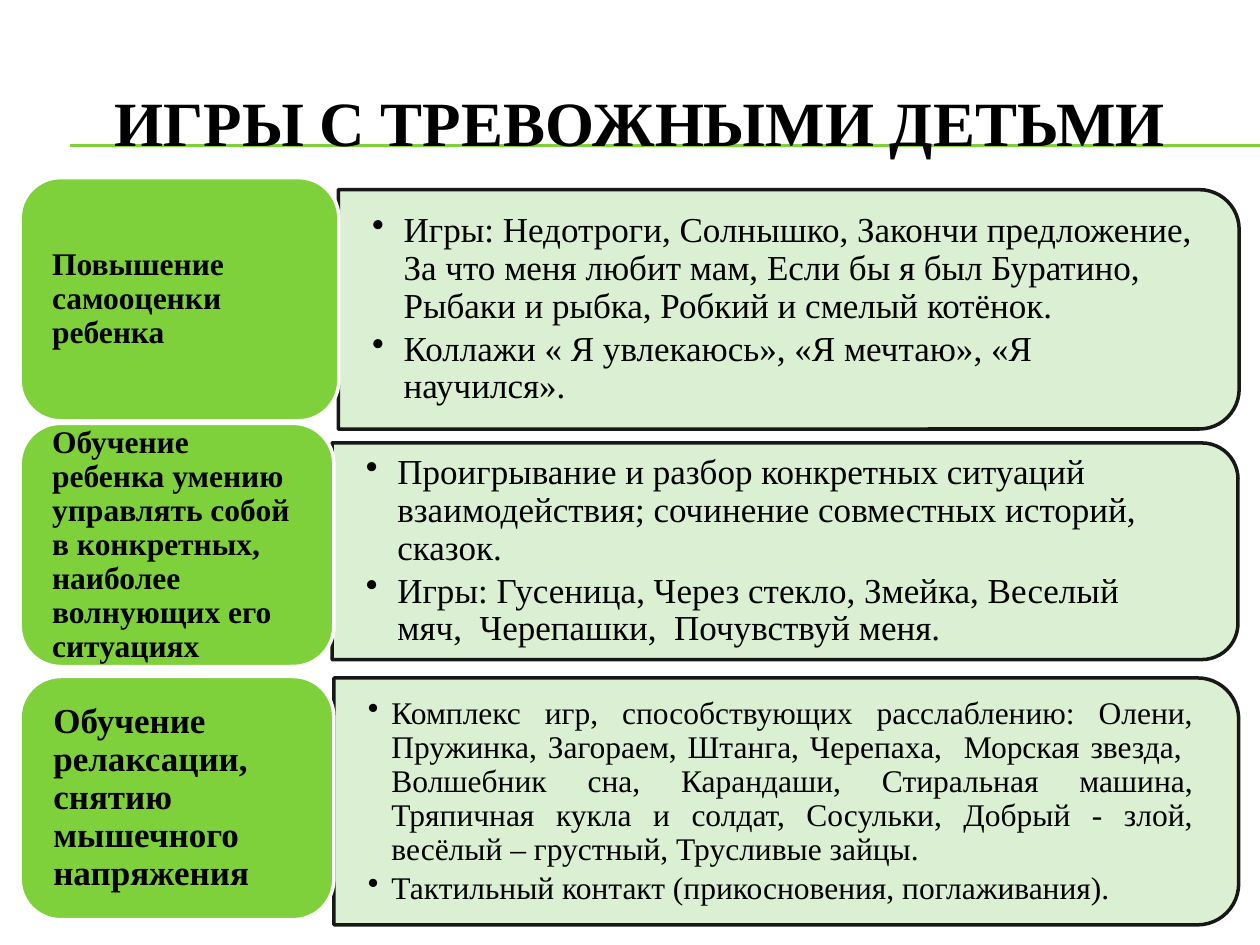
from lxml.etree import SubElement
from pptx import Presentation
from pptx.dml.color import RGBColor
from pptx.enum.shapes import MSO_CONNECTOR, MSO_SHAPE
from pptx.enum.text import MSO_ANCHOR, PP_ALIGN
from pptx.oxml.ns import qn
from pptx.util import Pt


def color(text):
    return RGBColor.from_string(text)


def write(shape, texts, size, bold, align, pad, dent=0, space=0.9):
    frame = shape.text_frame
    form = {
        "word_wrap": True, "vertical_anchor": MSO_ANCHOR.MIDDLE,
        "margin_left": Pt(pad[0]), "margin_right": Pt(pad[0]),
        "margin_top": Pt(pad[1]), "margin_bottom": Pt(pad[1]),
    }
    for key, value in form.items():
        setattr(frame, key, value)
    for num, text in enumerate(texts):
        para = frame.paragraphs[0] if num == 0 else frame.add_paragraph()
        para.text = text
        para.alignment = align
        para.line_spacing = space
        if dent:
            para.space_after = Pt(size * 0.15)
            props = para._p.get_or_add_pPr()
            props.set("marL", str(Pt(dent)))
            props.set("indent", str(-Pt(dent)))
            SubElement(props, qn("a:buChar"), char="•")
        font = para.runs[0].font
        for key, value in {"name": "Times New Roman", "size": Pt(size), "bold": bold}.items():
            setattr(font, key, value)
        font.color.rgb = color("000000")


deck = Presentation()
deck.slide_width, deck.slide_height = Pt(720), Pt(540)
slide = deck.slides.add_slide(deck.slide_layouts[6])
shapes = slide.shapes

for y in (82.8, 83.5):
    rule = shapes.add_connector(MSO_CONNECTOR.STRAIGHT, Pt(40.3), Pt(y), Pt(720), Pt(y))
    rule.line.color.rgb = color("7FD13B")
    rule.line.width = Pt(0.75)
    SubElement(rule._element.spPr, qn("a:effectLst"))

title = shapes.add_textbox(Pt(23.8), Pt(36), Pt(684), Pt(66.2))
write(title, ["ИГРЫ С ТРЕВОЖНЫМИ ДЕТЬМИ"], 36, True, PP_ALIGN.CENTER, (7.2, 3.6), space=1)

rows = [
    {
        "panel": (193.3, 108.4, 514.8, 136.8), "card": (101.5, 182.2),
        "head": "Повышение самооценки ребенка", "sizes": (18, 20),
        "dent": 18, "align": PP_ALIGN.LEFT, "pad": 11.5,
        "items": [
            "Игры: Недотроги, Солнышко, Закончи предложение, За что меня любит мам, "
            "Если бы я был Буратино, Рыбаки и рыбка, Робкий и смелый котёнок.",
            "Коллажи « Я увлекаюсь», «Я мечтаю», «Я научился».",
        ],
    },
    {
        "panel": (189.7, 253.1, 517.7, 123.8), "card": (241.9, 179.3),
        "head": "Обучение ребенка умению управлять собой в конкретных, "
                "наиболее волнующих его ситуациях", "sizes": (18, 20),
        "dent": 18, "align": PP_ALIGN.LEFT, "pad": 11.5,
        "items": [
            "Проигрывание и разбор конкретных ситуаций взаимодействия; "
            "сочинение совместных историй, сказок.",
            "Игры: Гусеница, Через стекло, Змейка, Веселый мяч,  Черепашки,  Почувствуй меня.",
        ],
    },
    {
        "panel": (190.8, 387.4, 517, 141.1), "card": (386.6, 179.3),
        "head": "Обучение релаксации, снятию мышечного напряжения", "sizes": (20, 18),
        "dent": 13.5, "align": PP_ALIGN.JUSTIFY, "pad": 12.2,
        "items": [
            "Комплекс игр, способствующих расслаблению: Олени, Пружинка, Загораем, Штанга, "
            "Черепаха,  Морская звезда,  Волшебник сна, Карандаши, Стиральная машина, "
            "Тряпичная кукла и солдат, Сосульки, Добрый - злой, весёлый – грустный, "
            "Трусливые зайцы.",
            "Тактильный контакт (прикосновения, поглаживания).",
        ],
    },
]

for row in rows:
    x, y, wide, high = row["panel"]
    shift = (wide - high) / 2
    panel = shapes.add_shape(
        MSO_SHAPE.ROUND_2_SAME_RECTANGLE, Pt(x + shift), Pt(y - shift), Pt(high), Pt(wide))
    panel.rotation = 90
    top, width = row["card"]
    card = shapes.add_shape(MSO_SHAPE.ROUNDED_RECTANGLE, Pt(11.5), Pt(top), Pt(width), Pt(139))
    for shape, fill, edge in ((panel, "D8EECE", "000000"), (card, "7FD13B", "FFFFFF")):
        shape.shadow.inherit = False
        shape.fill.solid()
        shape.fill.fore_color.rgb = color(fill)
        shape.line.color.rgb = color(edge)
        shape.line.width = Pt(2)
    for tone in panel._element.spPr.iter(qn("a:srgbClr")):
        SubElement(tone, qn("a:alpha"), val="90000")

    body = shapes.add_textbox(Pt(x), Pt(y + 6.5), Pt(wide - 6.5), Pt(high - 13))
    small, large = row["sizes"]
    write(body, row["items"], large, False, row["align"], (19.4, 10.1), row["dent"])
    write(card, [row["head"]], small, True, PP_ALIGN.LEFT, (row["pad"], 9.4))

deck.save("out.pptx")
